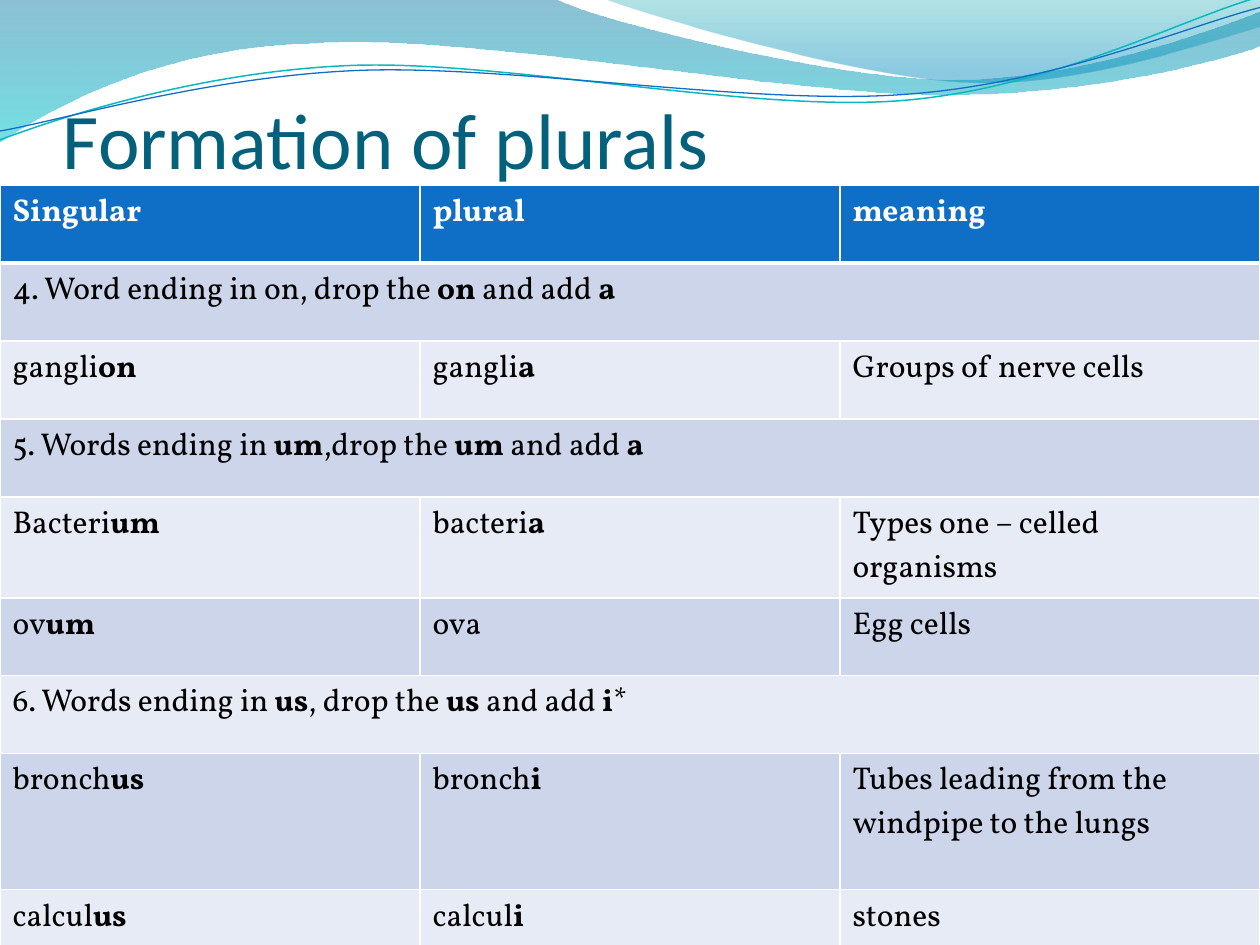
import math

import pptx
import pptx.dml.color
import pptx.enum.text
import pptx.oxml
import pptx.oxml.ns
import pptx.util
from lxml import etree

Inches, Pt, qn = pptx.util.Inches, pptx.util.Pt, pptx.oxml.ns.qn
RGB = pptx.dml.color.RGBColor
WHITE = RGB(0xFF, 0xFF, 0xFF)
BLACK = RGB(0, 0, 0)
BLUE = RGB(0x0F, 0x6F, 0xC6)
TEAL = RGB(0x0A, 0xB8, 0xBF)
TITLE = RGB(0x04, 0x61, 0x7B)
BANDS = [RGB(0xE7, 0xEB, 0xF5), RGB(0xCC, 0xD5, 0xEA)]
DEEP = [(0, RGB(0, 0x74, 0xA1), 45), (1, RGB(0, 0xC6, 0xCF), 55)]
PALE = [(0, RGB(0, 0xA1, 0xA9), 30), (0.8, RGB(0, 0x8B, 0xBF), 45)]
TILT = -2.7

LEFT = [(0, 0), (4.4, -0.01), (4.76, 0.17, 6.64, 0.63, 7.58, 0.63),
        (8.53, 0.63, 9.58, 0.26, 10, 0.09), (10.01, 0.36),
        (9.83, 0.44, 8.7, 0.76, 7.46, 0.75), (6.22, 0.75, 3.82, 0.28, 2.57, 0.34),
        (1.29, 0.36, 0.46, 0.83, -0.01, 1.13)]
RIGHT = [(4.79, -0.01), (5.09, 0.11, 6.82, 0.62, 7.69, 0.65),
         (8.56, 0.69, 9.61, 0.32, 10, 0.21), (10, 0)]
UPPER = [(0, 1.11), (0.48, 0.93, 1.58, 0.57, 2.77, 0.52),
         (3.95, 0.47, 5.93, 0.89, 7.13, 0.8), (8.33, 0.71, 9.38, 0.15, 9.98, -0.02)]
LOWER = [(0, 1.04), (0.47, 0.96, 1.64, 0.61, 2.83, 0.56),
         (4.03, 0.51, 5.97, 0.84, 7.17, 0.75), (8.36, 0.67, 9.41, 0.21, 10, 0.06)]

ROWS = [
    ["Singular", "plural", "meaning"],
    ["4. Word ending in on, drop the |on| and add |a"],
    ["gangli|on", "gangli|a", "Groups of nerve cells"],
    ["5. Words ending in |um|,drop the |um| and add |a"],
    ["Bacteri|um", "bacteri|a", "Types one – celled organisms"],
    ["ov|um", "ova", "Egg cells"],
    ["6. Words ending in |us|, drop the |us| and add |i|*"],
    ["bronch|us", "bronch|i", "Tubes leading from the windpipe to the lungs"],
    ["calcul|us", "calcul|i", "stones"],
]
TALL = {4: 0.8, 7: 1.08}


def turn(point, pivot, angle):
    """Return a point turned about a pivot by an angle in degrees."""
    x, y = point[0] - pivot[0], point[1] - pivot[1]
    cos, sin = math.cos(math.radians(angle)), math.sin(math.radians(angle))
    return pivot[0] + x * cos - y * sin, pivot[1] + x * sin + y * cos


class Deck:
    """Holds the style and the current slide."""

    def __init__(self):
        self.file = pptx.Presentation()
        self.file.slide_width, self.file.slide_height = Inches(10), Inches(7.5)
        self.slide = self.file.slides.add_slide(self.file.slide_layouts[6])
        self.head, self.body = "Calibri", "Vollkorn"

    def curve(self, path, close, pivot=(0, 0), tilt=0):
        points = [turn(part[i:i + 2], pivot, -tilt)
                  for part in path for i in range(0, len(part), 2)]
        points = [(Inches(x), Inches(y)) for x, y in points]
        build = self.slide.shapes.build_freeform(*points[0])
        build.add_line_segments(points[1:], close=close)
        shape = build.convert_to_shape()
        shape.shadow.inherit = False
        shape.rotation = tilt
        lines = iter(list(shape.element.iter(qn("a:lnTo"))))
        for part in path[1:]:
            line = next(lines)
            if len(part) == 6:
                line.tag = qn("a:cubicBezTo")
                for spare in (next(lines), next(lines)):
                    line.append(spare[0])
                    spare.getparent().remove(spare)
        return shape

    def wave(self, path, stops):
        shape = self.curve(path, True)
        shape.line.fill.background()
        shape.fill.gradient()
        shape.fill.gradient_angle = 270
        for stop, (place, color, alpha) in zip(shape.fill.gradient_stops, stops):
            stop.position = place
            stop.color.rgb = color
        nodes = shape.element.spPr.iter(qn("a:srgbClr"))
        for node, (place, color, alpha) in zip(nodes, stops):
            etree.SubElement(node, qn("a:alpha"), val=str(alpha * 1000))

    def line(self, path, pivot, color, width):
        shape = self.curve(path, False, pivot, TILT)
        shape.fill.background()
        shape.line.color.rgb = color
        shape.line.width = Pt(width)

    def run(self, para, text, font, size, color, bold=False):
        run = para.add_run()
        run.text = text
        run.font.name, run.font.size, run.font.bold = font, Pt(size), bold
        run.font.color.rgb = color

    def title(self, text):
        box = self.slide.shapes.add_textbox(Inches(0.5), Inches(0.77), Inches(9), Inches(0.7))
        frame = box.text_frame
        frame.word_wrap = True
        frame.vertical_anchor = pptx.enum.text.MSO_ANCHOR.BOTTOM
        frame.margin_left = frame.margin_right = frame.margin_bottom = 0
        self.run(frame.paragraphs[0], text, self.head, 45, TITLE)

    def edge(self, cell, side, width):
        props = cell._tc.get_or_add_tcPr()
        props.append(pptx.oxml.parse_xml(
            f'<a:ln{side} {pptx.oxml.ns.nsdecls("a")} w="{Pt(width)}"><a:solidFill>'
            f'<a:srgbClr val="{WHITE}"/></a:solidFill></a:ln{side}>'))

    def table(self, rows):
        grid = self.slide.shapes.add_table(
            len(rows), 3, 0, Inches(1.47), Inches(10), Inches(6.03)).table
        plain = (6.03 - TALL[7]) / (len(rows) - 1)
        for i, texts in enumerate(rows):
            grid.rows[i].height = Inches(TALL.get(i, plain))
            for j in range(3):
                cell = grid.cell(i, j)
                for side in "LRTB":
                    thick = (i, side) in [(0, "B"), (1, "T")]
                    self.edge(cell, side, 3 if thick else 1)
                cell.fill.solid()
                cell.fill.fore_color.rgb = BANDS[i % 2] if i else BLUE
            if len(texts) == 1:
                grid.cell(i, 0).merge(grid.cell(i, 2))
            for j, text in enumerate(texts):
                para = grid.cell(i, j).text_frame.paragraphs[0]
                for k, part in enumerate(text.split("|")):
                    self.run(para, part, self.body, 18, BLACK if i else WHITE,
                             i == 0 or k % 2 == 1)


def main():
    deck = Deck()
    deck.wave(LEFT, DEEP)
    deck.wave(RIGHT, PALE)
    deck.line(UPPER, (4.99, 0.57), TEAL, 0.85)
    deck.line(LOWER, (5, 0.59), BLUE, 0.75)
    deck.title("Formation of plurals")
    deck.table(ROWS)
    deck.file.save("out.pptx")


if __name__ == "__main__":
    main()
